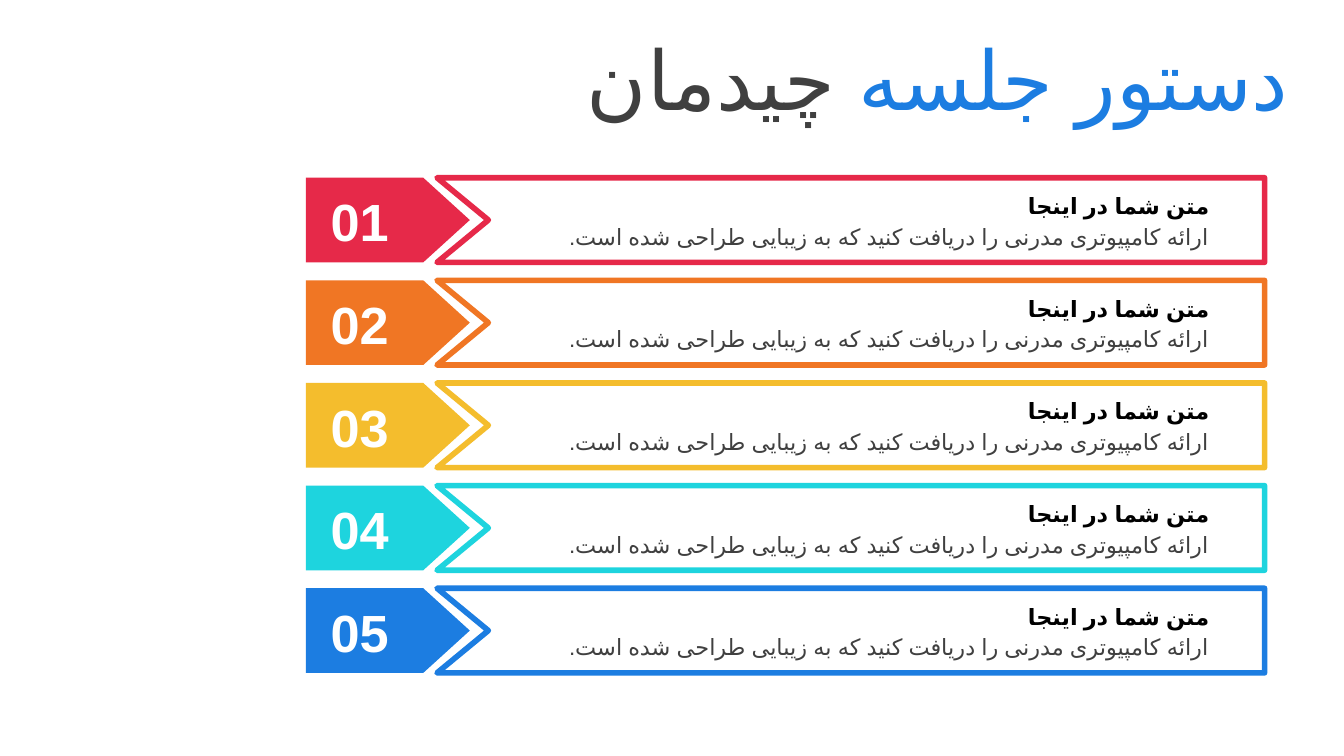
from dataclasses import dataclass

from lxml import etree
from pptx import Presentation
from pptx.dml.color import RGBColor
from pptx.enum.lang import MSO_LANGUAGE_ID
from pptx.enum.shapes import MSO_SHAPE
from pptx.enum.text import MSO_ANCHOR, PP_ALIGN
from pptx.oxml.ns import qn
from pptx.util import Cm, Pt

PENTAGON = MSO_SHAPE.PENTAGON
TOP, MIDDLE = MSO_ANCHOR.TOP, MSO_ANCHOR.MIDDLE
LEFT, RIGHT = PP_ALIGN.LEFT, PP_ALIGN.RIGHT
PERSIAN = MSO_LANGUAGE_ID.FARSI


@dataclass(frozen=True)
class Theme:
    font: str = "Arial"
    accent: str = "1C7DE1"
    dark: str = "404040"
    black: str = "000000"
    white: str = "FFFFFF"
    title_size: int = 44
    number_size: int = 28
    body_size: int = 12
    outline: int = 3


@dataclass(frozen=True)
class Box:
    x: float
    y: float
    w: float
    h: float


@dataclass(frozen=True)
class AgendaItem:
    number: str
    color: str
    heading: str = "متن شما در اینجا"
    body: str = "ارائه کامپیوتری مدرنی را دریافت کنید که به زیبایی طراحی شده است."


THEME = Theme()
ITEMS = [
    AgendaItem("01", "E62949"),
    AgendaItem("02", "F07624"),
    AgendaItem("03", "F4BD2D"),
    AgendaItem("04", "1ED4DE"),
    AgendaItem("05", "1C7DE1"),
]
FIRST_TOP, PITCH, ROW_HEIGHT = 3.36, 1.94, 1.6


def rgb(color: str) -> RGBColor:
    return RGBColor.from_string(color)


def set_persian(r) -> None:
    r.font.language_id = PERSIAN
    cs = etree.SubElement(r.font._element, qn("a:cs"))
    cs.set("typeface", THEME.font)
    cs.set("pitchFamily", "34")
    cs.set("charset", "0")


def add_text(s, box: Box, runs: list[tuple[str, str]], size: int,
             bold: bool = False, rtl: bool = True, anchor=MIDDLE) -> None:
    sp = s.shapes.add_textbox(Cm(box.x), Cm(box.y), Cm(box.w), Cm(box.h))
    tf = sp.text_frame
    tf.word_wrap = True
    tf.vertical_anchor = anchor
    if not rtl:
        tf.margin_top = tf.margin_bottom = 0
    p = tf.paragraphs[0]
    p.alignment = RIGHT if rtl else LEFT
    if rtl:
        p._p.get_or_add_pPr().set("rtl", "1")
    p.font.size = Pt(size)
    p.font.bold = bold
    p.font.name = THEME.font
    for text, color in runs:
        r = p.add_run()
        r.text = text
        r.font.color.rgb = rgb(color)
        if rtl:
            set_persian(r)


def add_number_tag(s, y: float, color: str) -> None:
    sp = s.shapes.add_shape(PENTAGON, Cm(5.78), Cm(y), Cm(3.1), Cm(ROW_HEIGHT))
    sp.adjustments[0] = 0.55
    sp.shadow.inherit = False
    sp.fill.solid()
    sp.fill.fore_color.rgb = rgb(color)
    sp.line.fill.background()


def add_notched_frame(s, y: float, color: str) -> None:
    left, right, notch = Cm(8.26), Cm(23.9), Cm(9.23)
    top, middle, bottom = Cm(y), Cm(y + ROW_HEIGHT / 2), Cm(y + ROW_HEIGHT)
    builder = s.shapes.build_freeform(left, top)
    builder.add_line_segments(
        [(right, top), (right, bottom), (left, bottom), (notch, middle)], close=True)
    sp = builder.convert_to_shape()
    sp.shadow.inherit = False
    sp.fill.solid()
    sp.fill.fore_color.rgb = rgb(THEME.white)
    sp.line.color.rgb = rgb(color)
    sp.line.width = Pt(THEME.outline)
    etree.SubElement(sp.line._get_or_add_ln(), qn("a:round"))


def add_agenda_item(s, item: AgendaItem, y: float) -> None:
    add_number_tag(s, y, item.color)
    add_notched_frame(s, y, item.color)
    add_text(s, Box(6, y + 0.22, 1.68, 1.19), [(item.number, THEME.white)],
             THEME.number_size, bold=True, rtl=False)
    add_text(s, Box(9.65, y + 0.15, 13.46, 0.76), [(item.heading, THEME.black)],
             THEME.body_size, bold=True, anchor=TOP)
    add_text(s, Box(9.65, y + 0.73, 13.46, 0.76), [(item.body, THEME.dark)],
             THEME.body_size, anchor=TOP)


def main() -> None:
    prs = Presentation()
    prs.slide_width, prs.slide_height = Cm(25.4), Cm(14.29)
    s = prs.slides.add_slide(prs.slide_layouts[6])
    add_text(s, Box(3.71, 0.23, 20.9, 2.46),
             [("دستور جلسه ", THEME.accent), ("چیدمان", THEME.dark)],
             THEME.title_size)
    for i, item in enumerate(ITEMS):
        add_agenda_item(s, item, FIRST_TOP + i * PITCH)
    prs.save("out.pptx")


if __name__ == "__main__":
    main()
